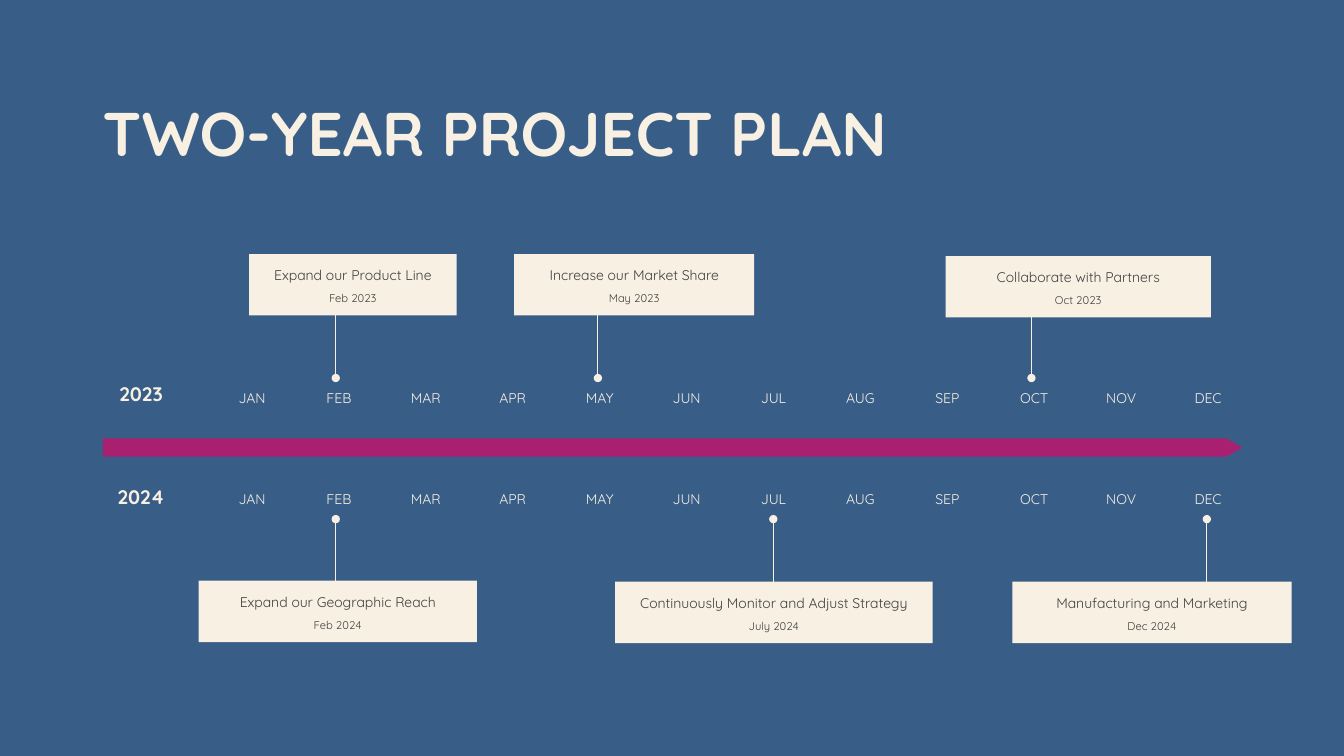
from pptx import Presentation
from pptx.dml.color import RGBColor
from pptx.enum.shapes import MSO_CONNECTOR, MSO_SHAPE
from pptx.enum.text import MSO_ANCHOR, PP_ALIGN
from pptx.oxml.ns import qn
from pptx.util import Inches, Pt
from lxml.etree import SubElement

COLORS = {"background": "385E88", "cream": "F8F0E3", "arrow": "AA2070", "ink": "404040"}
FONT = "Quicksand"

MONTHS = "JAN FEB MAR APR MAY JUN JUL AUG SEP OCT NOV DEC".split()
MONTH_LEFT, MONTH_STEP = 2.15, 0.862
CARD_HEIGHT = 0.61
DATE_WIDTH, DATE_OFFSET = 1.6, 0.34

# year, top of the year label, top of the month labels
YEARS = [("2023", 3.67, 3.83), ("2024", 4.69, 4.84)]

# goal, date, card left, top and width, marker x, line start and end
MILESTONES = [
    ("Expand our Product Line", "Feb 2023", 2.47, 2.52, 2.06, 3.33, 2.95, 3.75),
    ("Increase our Market Share", "May 2023", 5.1, 2.52, 2.38, 5.93, 2.95, 3.75),
    ("Collaborate with Partners", "Oct 2023", 9.38, 2.54, 2.63, 10.23, 2.95, 3.75),
    ("Expand our Geographic Reach", "Feb 2024", 1.97, 5.76, 2.76, 3.33, 5.95, 5.15),
    ("Continuously Monitor and Adjust Strategy", "July 2024", 6.1, 5.77, 3.15, 7.67, 5.95, 5.15),
    ("Manufacturing and Marketing", "Dec 2024", 10.04, 5.77, 2.77, 11.97, 5.95, 5.15),
]


def rgb(color):
    return RGBColor.from_string(COLORS[color])


class TimelineSlide:
    def __init__(self, presentation):
        self.slide = presentation.slides.add_slide(presentation.slide_layouts[6])
        fill = self.slide.background.fill
        fill.solid()
        fill.fore_color.rgb = rgb("background")

    def set_text(self, shape, text, size, color, bold=False, align=PP_ALIGN.CENTER,
                 anchor=MSO_ANCHOR.TOP, spacing=0.9):
        frame = shape.text_frame
        frame.word_wrap = True
        frame.vertical_anchor = anchor
        paragraph = frame.paragraphs[0]
        paragraph.text = text
        paragraph.alignment = align
        paragraph.line_spacing = spacing
        paragraph.font.name = FONT
        paragraph.font.size = Pt(size)
        paragraph.font.bold = bold
        paragraph.font.color.rgb = rgb(color)

    def label(self, left, top, width, height, text, size, color="cream", **style):
        box = self.slide.shapes.add_textbox(
            Inches(left), Inches(top), Inches(width), Inches(height))
        self.set_text(box, text, size, color, **style)

    def block(self, kind, left, top, width, height, color):
        shape = self.slide.shapes.add_shape(
            kind, Inches(left), Inches(top), Inches(width), Inches(height))
        shape.shadow.inherit = False
        shape.fill.solid()
        shape.fill.fore_color.rgb = rgb(color)
        shape.line.fill.background()
        return shape

    def arrow(self, left, top, width, height):
        arrow = self.block(MSO_SHAPE.RIGHT_ARROW, left, top, width, height, "arrow")
        arrow.adjustments[0] = 1
        arrow.adjustments[1] = 0.859

    def marker(self, x, start, end):
        """Draw a vertical line that ends in a dot."""
        marker = self.slide.shapes.add_connector(
            MSO_CONNECTOR.STRAIGHT, Inches(x), Inches(start), Inches(x), Inches(end))
        marker.line.color.rgb = rgb("cream")
        marker.line.width = Pt(0.75)
        properties = marker._element.spPr
        SubElement(properties.find(qn("a:ln")), qn("a:tailEnd"), type="oval")
        SubElement(properties, qn("a:effectLst"))

    def card(self, goal, date, left, top, width):
        card = self.block(MSO_SHAPE.RECTANGLE, left, top, width, CARD_HEIGHT, "cream")
        card.text_frame.margin_top = Inches(0.04)
        self.set_text(card, goal, 10, "ink", spacing=1.5)
        self.label(left + (width - DATE_WIDTH) / 2, top + DATE_OFFSET, DATE_WIDTH, 0.24,
                   date, 8, "ink")

    def year(self, year, year_top, months_top):
        self.label(1, year_top, 0.8, 0.5, year, 14, bold=True, anchor=MSO_ANCHOR.MIDDLE)
        for index, month in enumerate(MONTHS):
            self.label(MONTH_LEFT + index * MONTH_STEP, months_top, 0.7, 0.22, month, 10)


def main():
    presentation = Presentation()
    presentation.slide_width = Inches(13.33)
    presentation.slide_height = Inches(7.5)

    plan = TimelineSlide(presentation)
    plan.arrow(1.02, 4.35, 11.3, 0.18)
    plan.label(0.92, 0.98, 11.5, 1.45, "TWO-YEAR PROJECT PLAN", 44,
               bold=True, align=PP_ALIGN.LEFT)
    for goal, date, left, top, width, x, start, end in MILESTONES:
        plan.marker(x, start, end)
        plan.card(goal, date, left, top, width)
    for year in YEARS:
        plan.year(*year)

    presentation.save("out.pptx")


if __name__ == "__main__":
    main()
